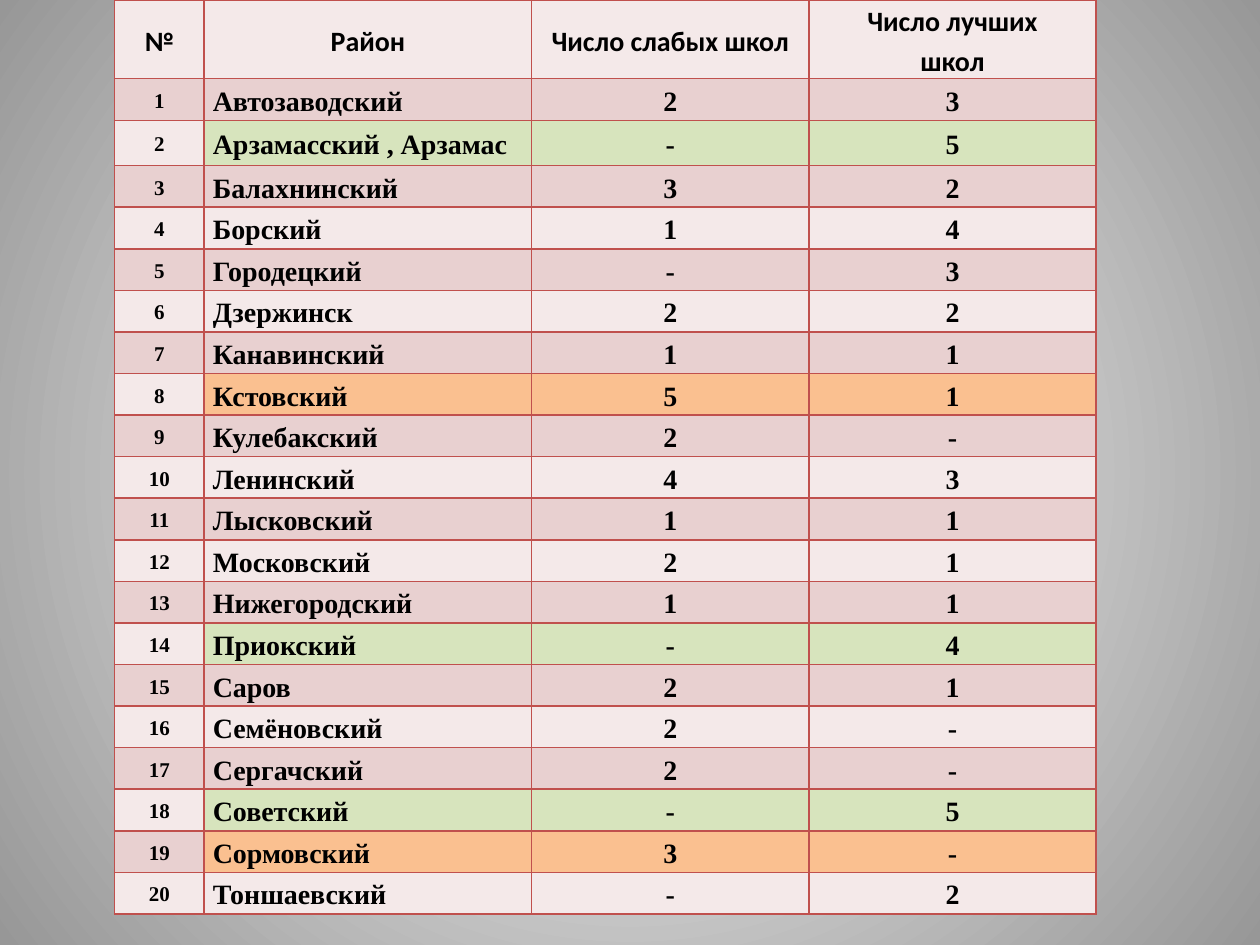
from dataclasses import dataclass

from lxml import etree
from pptx import Presentation
from pptx import util as u
from pptx.dml.color import RGBColor
from pptx.enum import text
from pptx.oxml import ns


@dataclass(frozen=True)
class Theme:
    """Colours, fonts and type sizes of the slide."""
    ink: str = "000000"
    line: str = "C0504D"
    light: str = "F4E9E9"
    dark: str = "E8D0D0"
    good: str = "D7E4BD"
    weak: str = "FAC090"
    glow: str = "FFFFFF"
    edge: str = "979797"
    sans: str = "Calibri"
    serif: str = "Times New Roman"
    body: int = 16
    small: int = 12


HEADS = ("№", "Район", "Число слабых школ", "Число лучших\nшкол")
AREAS = (
    ("Автозаводский", "2", "3"),
    ("Арзамасский , Арзамас", "-", "5"),
    ("Балахнинский", "3", "2"),
    ("Борский", "1", "4"),
    ("Городецкий", "-", "3"),
    ("Дзержинск", "2", "2"),
    ("Канавинский", "1", "1"),
    ("Кстовский", "5", "1"),
    ("Кулебакский", "2", "-"),
    ("Ленинский", "4", "3"),
    ("Лысковский", "1", "1"),
    ("Московский", "2", "1"),
    ("Нижегородский", "1", "1"),
    ("Приокский", "-", "4"),
    ("Саров", "2", "1"),
    ("Семёновский", "2", "-"),
    ("Сергачский", "2", "-"),
    ("Советский", "-", "5"),
    ("Сормовский", "3", "-"),
    ("Тоншаевский", "-", "2"),
)
GOOD = {2, 14, 18}
WEAK = {8, 19}
COLS = (0.71, 2.6, 2.2, 2.28)
ROWS = [0.58] + [0.33] * len(AREAS)
ROWS[2] = 0.36


class Deck:
    """Draws styled elements on the current slide."""

    def __init__(self, theme):
        self.theme = theme
        self.prs = Presentation()
        self.prs.slide_width = u.Inches(10)
        self.prs.slide_height = u.Inches(7.5)
        self.slide = self.prs.slides.add_slide(self.prs.slide_layouts[6])

    def back(self):
        """Fill the background with a round gradient."""
        fill = self.slide.background.fill
        fill.gradient()
        for stop, tone in zip(fill.gradient_stops, (self.theme.glow, self.theme.edge)):
            stop.color.rgb = RGBColor.from_string(tone)
        grad = self.slide.element.find(".//" + ns.qn("a:gradFill"))
        grad.remove(grad.find(ns.qn("a:lin")))
        ring = etree.SubElement(grad, ns.qn("a:path"), path="circle")
        sides = dict.fromkeys("ltrb", "50000")
        etree.SubElement(ring, ns.qn("a:fillToRect"), **sides)

    def edges(self, cell):
        """Outline all four sides of a cell."""
        props = cell._tc.get_or_add_tcPr()
        for side in "LRTB":
            line = etree.SubElement(props, ns.qn("a:ln" + side), w=str(u.Pt(1)))
            fill = etree.SubElement(line, ns.qn("a:solidFill"))
            etree.SubElement(fill, ns.qn("a:srgbClr"), val=self.theme.line)

    def cell(self, cell, words, tone, font, size, align, hang=0):
        """Write and format one cell."""
        self.edges(cell)
        cell.fill.solid()
        cell.fill.fore_color.rgb = RGBColor.from_string(tone)
        cell.vertical_anchor = text.MSO_ANCHOR.MIDDLE
        cell.margin_left = cell.margin_right = u.Inches(0.07)
        cell.margin_top = cell.margin_bottom = 0
        cell.text = words
        for para in cell.text_frame.paragraphs:
            para.alignment = align
            para.line_spacing = 1.15
            para.font.name = font
            para.font.size = u.Pt(size)
            para.font.bold = True
            para.font.color.rgb = RGBColor.from_string(self.theme.ink)
            if hang:
                props = para._p.get_or_add_pPr()
                props.set("marL", str(u.Inches(hang)))
                props.set("indent", str(-u.Inches(hang)))

    def table(self, left, top):
        """Add the table of districts."""
        look, align = self.theme, text.PP_ALIGN
        grid = self.slide.shapes.add_table(
            len(ROWS), len(COLS), u.Inches(left), u.Inches(top),
            u.Inches(sum(COLS)), u.Inches(sum(ROWS))).table
        grid.first_row = grid.horz_banding = False
        for col, wide in zip(grid.columns, COLS):
            col.width = u.Inches(wide)
        for row, high in zip(grid.rows, ROWS):
            row.height = u.Inches(high)
        for c, head in enumerate(HEADS):
            self.cell(grid.cell(0, c), head, look.light, look.sans, look.body, align.CENTER)
        for r, area in enumerate(AREAS, 1):
            band = look.dark if r % 2 else look.light
            tone = look.good if r in GOOD else look.weak if r in WEAK else band
            self.cell(grid.cell(r, 0), str(r), band, look.serif, look.small,
                      align.CENTER, hang=0.38)
            for c, words in enumerate(area, 1):
                side = align.LEFT if c == 1 else align.CENTER
                self.cell(grid.cell(r, c), words, tone, look.serif, look.body, side)


def main():
    """Build the slide and save it."""
    deck = Deck(Theme())
    deck.back()
    deck.table(0.91, 0)
    deck.prs.save("out.pptx")


if __name__ == "__main__":
    main()
